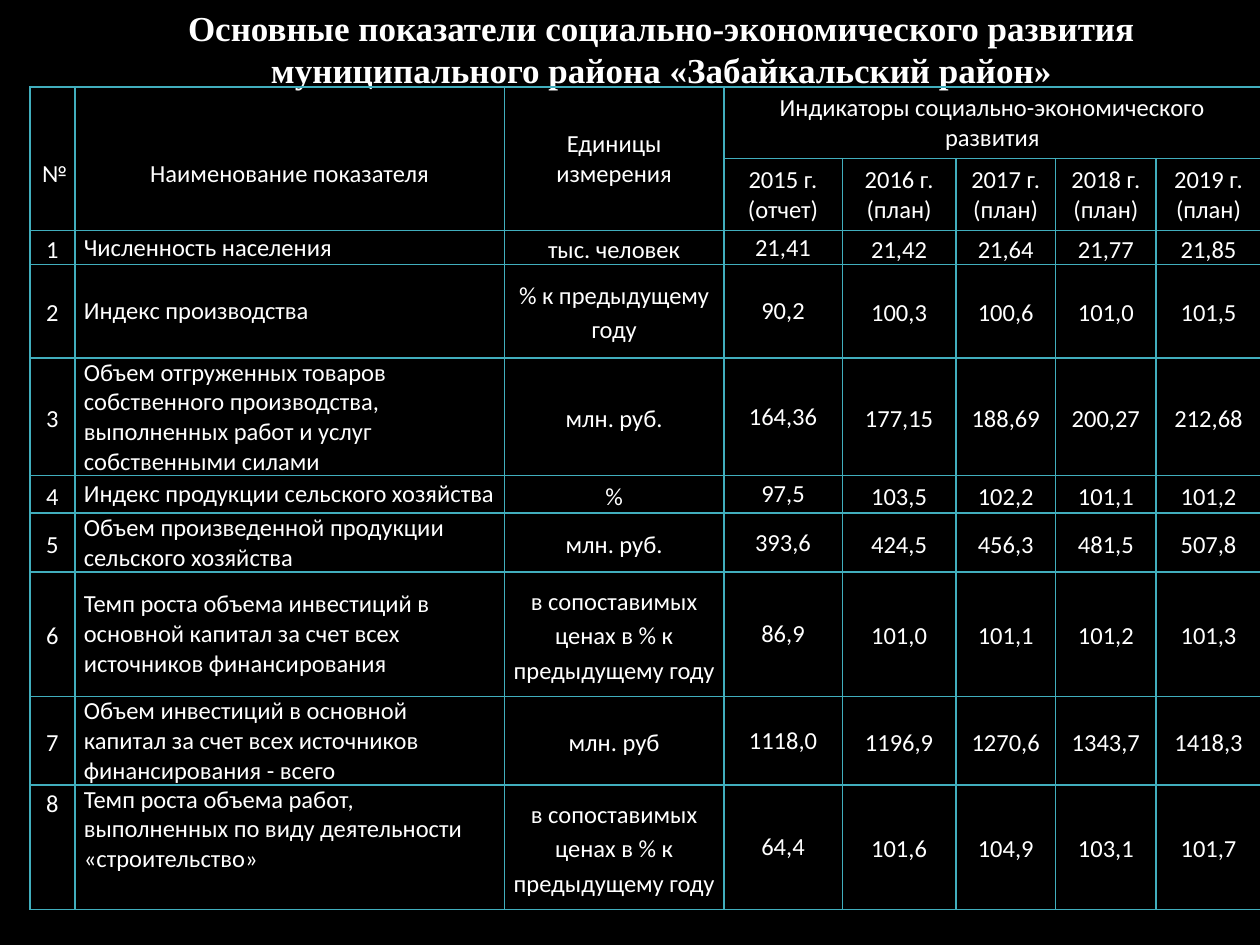
from lxml import etree
from pptx import Presentation
from pptx import util as u
from pptx.dml.color import RGBColor
from pptx.enum import text as t
from pptx.oxml.ns import qn

WHITE, BLACK, TEAL = "FFFFFF", "000000", "41AEBD"
COLS = [0.91, 8.66, 4.42, 2.39, 2.29, 2.01, 2.03, 2.11]
ROWS = [1.35, 1.35, 0.58, 1.88, 2.24, 0.76, 1.17, 2.51, 1.68, 2.51]
TITLE = ["Основные показатели социально-экономического развития",
         "муниципального района «Забайкальский район»"]
HEADS = ["№", "Наименование показателя", "Единицы\nизмерения",
         "Индикаторы социально-экономического развития"]
YEARS = ["2015 г.\n(отчет)", "2016 г. (план)", "2017 г. (план)",
         "2018 г. (план)", "2019 г. (план)"]
GROWTH = "в сопоставимых ценах в % к предыдущему году"
DATA = [
    ("Численность населения", "тыс. человек",
     "21,41 21,42 21,64 21,77 21,85"),
    ("Индекс производства", "% к предыдущему году",
     "90,2 100,3 100,6 101,0 101,5"),
    ("Объем отгруженных товаров собственного производства, "
     "выполненных работ и услуг собственными силами", "млн. руб.",
     "164,36 177,15 188,69 200,27 212,68"),
    ("Индекс продукции сельского хозяйства", "%",
     "97,5 103,5 102,2 101,1 101,2"),
    ("Объем произведенной продукции сельского хозяйства", "млн. руб.",
     "393,6 424,5 456,3 481,5 507,8"),
    ("Темп роста объема инвестиций в основной капитал за счет всех "
     "источников финансирования", GROWTH,
     "86,9 101,0 101,1 101,2 101,3"),
    ("Объем инвестиций в основной капитал за счет всех источников "
     "финансирования - всего", "млн. руб",
     "1118,0 1196,9 1270,6 1343,7 1418,3"),
    ("Темп роста объема работ, выполненных по виду деятельности "
     "«строительство»", GROWTH,
     "64,4 101,6 104,9 103,1 101,7"),
]


def color(code):
    return RGBColor.from_string(code)


def write(frame, lines, size=14, font="Calibri", bold=False,
          align=t.PP_ALIGN.CENTER, space=None):
    for i, line in enumerate(lines):
        para = frame.paragraphs[0] if i == 0 else frame.add_paragraph()
        para.alignment = align
        if space:
            para.line_spacing = space
        run = para.add_run()
        run.text = line
        run.font.size = u.Pt(size)
        run.font.name = font
        run.font.bold = bold
        run.font.color.rgb = color(WHITE)


def border(cell):
    """Clear the cell's fill and draw a thin line on its four sides."""
    cell.fill.background()
    props = cell._tc.get_or_add_tcPr()
    for i, side in enumerate(("lnL", "lnR", "lnT", "lnB")):
        line = etree.Element(qn("a:" + side), w=str(u.Pt(1)))
        fill = etree.SubElement(line, qn("a:solidFill"))
        etree.SubElement(fill, qn("a:srgbClr"), val=TEAL)
        props.insert(i, line)


def fill_cell(cell, words, side=0.18, top=0, foot=0,
              anchor=t.MSO_ANCHOR.MIDDLE, **form):
    cell.margin_left = cell.margin_right = u.Cm(side)
    cell.margin_top, cell.margin_bottom = u.Cm(top), u.Cm(foot)
    cell.vertical_anchor = anchor
    write(cell.text_frame, words.split("\n"), **form)


def add_title(slide):
    title = slide.shapes.title
    title.left, title.top = u.Cm(3.38), u.Cm(0)
    title.width, title.height = u.Cm(19.91), u.Cm(1.96)
    frame = title.text_frame
    frame.word_wrap = False
    frame.auto_size = t.MSO_AUTO_SIZE.SHAPE_TO_FIT_TEXT
    frame.vertical_anchor = t.MSO_ANCHOR.TOP
    write(frame, TITLE, size=20, font="Times New Roman", bold=True)


def add_grid(slide):
    grid = slide.shapes.add_table(
        len(ROWS), len(COLS), u.Cm(0.6), u.Cm(1.75),
        u.Cm(sum(COLS)), u.Cm(sum(ROWS))).table
    grid.first_row = grid.horz_banding = False
    for col, width in zip(grid.columns, COLS):
        col.width = u.Cm(width)
    for row, height in zip(grid.rows, ROWS):
        row.height = u.Cm(height)
    for cell in grid.iter_cells():
        border(cell)
    return grid


def fill_heads(grid):
    for c in range(3):
        grid.cell(0, c).merge(grid.cell(1, c))
    grid.cell(0, 3).merge(grid.cell(0, 7))
    pad = {"side": 0.25, "foot": 0.13}
    for c, head in enumerate(HEADS):
        # The first two heads sit one line lower than the centre.
        fill_cell(grid.cell(0, c), head, top=0.73 if c < 2 else 0.13, **pad)
    for c, year in enumerate(YEARS, 3):
        fill_cell(grid.cell(1, c), year, top=0.13, **pad)


def fill_rows(grid):
    for n, (name, unit, nums) in enumerate(DATA, 1):
        last = n == len(DATA)
        for c, words in enumerate([str(n), name, unit, *nums.split()]):
            fill_cell(
                grid.cell(n + 1, c), words,
                anchor=t.MSO_ANCHOR.TOP if last and c < 2
                else t.MSO_ANCHOR.MIDDLE,
                align=t.PP_ALIGN.LEFT if c == 1 else t.PP_ALIGN.CENTER,
                space=None if c in (1, 3) else 1.15)


def main():
    deck = Presentation()
    deck.slide_width, deck.slide_height = u.Cm(25.4), u.Cm(19.05)
    slide = deck.slides.add_slide(deck.slide_layouts[5])
    back = slide.background.fill
    back.solid()
    back.fore_color.rgb = color(BLACK)
    add_title(slide)
    grid = add_grid(slide)
    fill_heads(grid)
    fill_rows(grid)
    deck.save("out.pptx")


if __name__ == "__main__":
    main()
